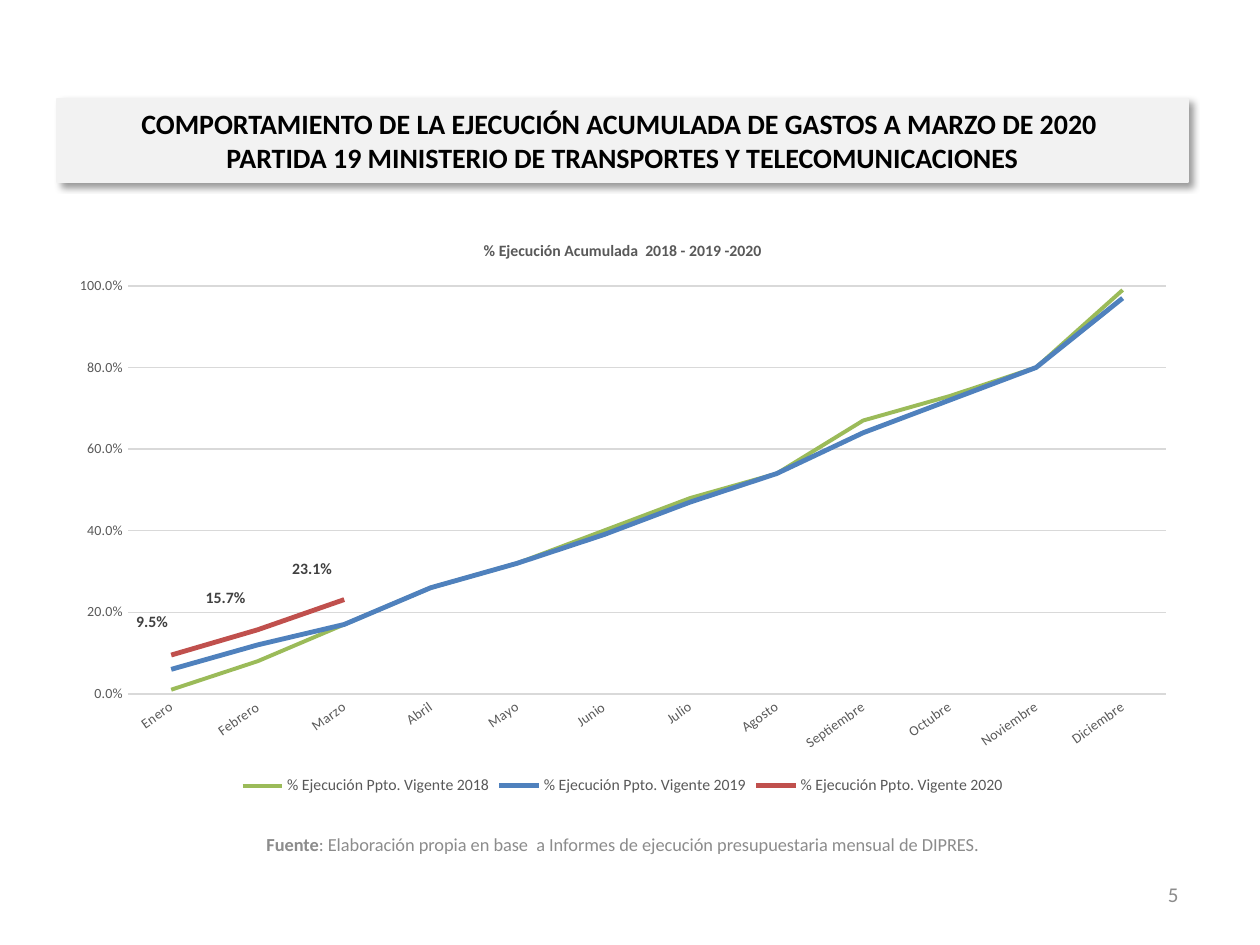
from lxml import etree
from pptx import Presentation
from pptx.chart.data import CategoryChartData
from pptx.dml.color import RGBColor
from pptx.enum.chart import XL_CHART_TYPE, XL_LABEL_POSITION, XL_LEGEND_POSITION, XL_TICK_MARK
from pptx.enum.text import MSO_ANCHOR, MSO_AUTO_SIZE, PP_ALIGN
from pptx.oxml import parse_xml
from pptx.oxml.ns import nsdecls, qn
from pptx.util import Emu, Pt

LINE = XL_CHART_TYPE.LINE
BOTTOM = XL_LEGEND_POSITION.BOTTOM
RIGHT_OF_POINT = XL_LABEL_POSITION.RIGHT
NO_TICK = XL_TICK_MARK.NONE
MIDDLE = MSO_ANCHOR.MIDDLE
NO_FIT = MSO_AUTO_SIZE.NONE
CENTER, RIGHT = PP_ALIGN.CENTER, PP_ALIGN.RIGHT

PX = 914400 / 126
FONT = "Calibri"
PERCENT = "0.0%"
COLORS = {
    "black": "000000", "banner": "F2F2F2", "muted": "8C8C8C", "axis": "595959",
    "grid": "D9D9D9", "label": "404040", "green": "9BBB59", "blue": "4F81BD", "red": "C0504D",
}
CHART_WIDTH, CHART_HEIGHT = 1131, 581
MONTHS = ["Enero", "Febrero", "Marzo", "Abril", "Mayo", "Junio", "Julio", "Agosto",
          "Septiembre", "Octubre", "Noviembre", "Diciembre"]
SERIES = [
    (2018, "green", 2.25, [0.01, 0.08, 0.17, 0.26, 0.32, 0.4, 0.48, 0.54, 0.67, 0.73, 0.8, 0.99]),
    (2019, "blue", 2.75, [0.06, 0.12, 0.17, 0.26, 0.32, 0.39, 0.47, 0.54, 0.64, 0.72, 0.8, 0.97]),
    (2020, "red", 2.75, [0.095, 0.157, 0.231] + [None] * 9),
]
LABEL_OFFSETS = [(-40, -33), (-57, -32), (-57, -30)]


def px(*lengths):
    """Turn pixel lengths into EMU."""
    return [Emu(round(length * PX)) for length in lengths]


def rgb(name):
    """Return a named colour."""
    return RGBColor.from_string(COLORS[name])


def style_font(font, size, color, bold=False):
    """Set the face, size, colour and weight of a font."""
    font.name, font.size, font.bold = FONT, Pt(size), bold
    font.color.rgb = rgb(color)


def write(para, text, size=12, color="muted", bold=False, align=CENTER):
    """Add a formatted span of text to a paragraph."""
    para.alignment = align
    span = para.add_run()
    span.text = text
    style_font(span.font, size, color, bold)


def add_text_box(page, place):
    """Add a wrapped, vertically centred text box and return its paragraph."""
    frame = page.shapes.add_textbox(*px(*place)).text_frame
    frame.word_wrap, frame.vertical_anchor = True, MIDDLE
    return frame.paragraphs[0]


def add_banner(page, lines):
    """Turn the title placeholder into a shaded banner."""
    banner = page.shapes.title
    banner.left, banner.top, banner.width, banner.height = px(57, 99, 1131, 83)
    banner.fill.solid()
    banner.fill.fore_color.rgb = rgb("banner")
    banner.line.color.rgb = rgb("banner")
    banner.line.width = Pt(0.75)
    banner._element.spPr.append(parse_xml(
        f'<a:effectLst {nsdecls("a")}><a:outerShdw blurRad="50800" dist="38100" dir="2700000" '
        f'algn="tl" rotWithShape="0"><a:srgbClr val="{COLORS["black"]}"><a:alpha val="40000"/>'
        '</a:srgbClr></a:outerShdw></a:effectLst>'))
    frame = banner.text_frame
    frame.auto_size, frame.word_wrap, frame.vertical_anchor = NO_FIT, True, MIDDLE
    para = frame.paragraphs[0]
    for index, line in enumerate(lines):
        if index:
            para.add_line_break()
        write(para, line, size=16, color="black", bold=True)


def manual_layout(x, y, **settings):
    """Build a chart layout element from pixel offsets and other settings."""
    layout = etree.Element(qn("c:layout"))
    manual = etree.SubElement(layout, qn("c:manualLayout"))
    settings |= {"x": x / CHART_WIDTH, "y": y / CHART_HEIGHT}
    for name in ("layoutTarget", "xMode", "yMode", "x", "y", "w", "h"):
        if name in settings:
            etree.SubElement(manual, qn(f"c:{name}")).set("val", str(settings[name]))
    return layout


def style_axis(axis):
    """Format the parts that both axes share."""
    axis.major_tick_mark = axis.minor_tick_mark = NO_TICK
    style_font(axis.tick_labels.font, 8, "axis")


def hide_leader_lines(labels):
    """Turn off the lines that join moved labels to their points."""
    for mark in labels.findall(qn("c:showLeaderLines")):
        mark.set("val", "0")
    labels.append(parse_xml(
        f'<c:extLst {nsdecls("c")}><c:ext uri="{{CE6537A1-D6FC-4f65-9D91-7224C49458BB}}" '
        'xmlns:c15="http://schemas.microsoft.com/office/drawing/2012/chart">'
        '<c15:showLeaderLines val="0"/></c:ext></c:extLst>'))


def label_points(series):
    """Label each point of a series up and to the left of it."""
    labels = series.data_labels
    labels.show_value = True
    labels.number_format, labels.number_format_is_linked = PERCENT, False
    style_font(labels.font, 9, "label", bold=True)
    for index, (across, down) in enumerate(LABEL_OFFSETS):
        label = series.points[index].data_label
        style_font(label.font, 9, "label", bold=True)
        label.position = RIGHT_OF_POINT
        mark = labels._element.findall(qn("c:dLbl"))[index]
        mark.find(qn("c:idx")).addnext(manual_layout(across, down))
    hide_leader_lines(labels._element)


def add_line_chart(page):
    """Add the chart of accumulated execution by month."""
    data = CategoryChartData(number_format=PERCENT)
    data.categories = MONTHS
    for year, _, _, values in SERIES:
        data.add_series(f"% Ejecución Ppto. Vigente {year}", values)
    chart = page.shapes.add_chart(LINE, *px(57, 219, CHART_WIDTH, CHART_HEIGHT), data).chart
    style_font(chart.font, 10, "black")
    write(chart.chart_title.text_frame.paragraphs[0], "% Ejecución Acumulada  2018 - 2019 -2020",
          size=9, color="axis", bold=True)
    chart.chart_title.include_in_layout = False
    chart.has_legend = True
    chart.legend.position, chart.legend.include_in_layout = BOTTOM, False
    style_font(chart.legend.font, 9, "axis")

    months, shares = chart.category_axis, chart.value_axis
    style_axis(months)
    months.format.line.color.rgb = rgb("grid")
    months.format.line.width = Pt(1)
    months._element.find(qn("c:txPr")).find(qn("a:bodyPr")).set("rot", "-2100000")
    style_axis(shares)
    shares.format.line.fill.background()
    shares.minimum_scale, shares.maximum_scale, shares.major_unit = 0, 1, 0.2
    shares.tick_labels.number_format = PERCENT
    shares.tick_labels.number_format_is_linked = False
    shares.major_gridlines.format.line.color.rgb = rgb("grid")
    shares.major_gridlines.format.line.width = Pt(0.75)

    plot = chart.plots[0]
    plot.vary_by_categories = False
    for series, (_, color, width, _) in zip(plot.series, SERIES):
        series.smooth = False
        series.format.line.color.rgb = rgb(color)
        series.format.line.width = Pt(width)
    label_points(plot.series[-1])

    area = chart._chartSpace.chart.plotArea
    for layout in area.findall(qn("c:layout")):
        area.remove(layout)
    area.insert(0, manual_layout(71, 67, layoutTarget="inner", xMode="edge", yMode="edge",
                                 w=1038 / CHART_WIDTH, h=408 / CHART_HEIGHT))


def main():
    """Build the slide and save it."""
    deck = Presentation()
    deck.slide_width, deck.slide_height = px(1260, 945)
    page = deck.slides.add_slide(deck.slide_layouts[5])
    add_banner(page, ["COMPORTAMIENTO DE LA EJECUCIÓN ACUMULADA DE GASTOS A MARZO DE 2020 ",
                      "PARTIDA 19 MINISTERIO DE TRANSPORTES Y TELECOMUNICACIONES"])
    add_line_chart(page)
    source = add_text_box(page, (122, 819, 1002, 50))
    write(source, "Fuente", size=10.5, bold=True)
    write(source, ": Elaboración propia en base  a Informes de ejecución presupuestaria mensual de DIPRES.",
          size=10.5)
    write(add_text_box(page, (897, 869, 294, 50)), "5", align=RIGHT)
    deck.save("out.pptx")


if __name__ == "__main__":
    main()
